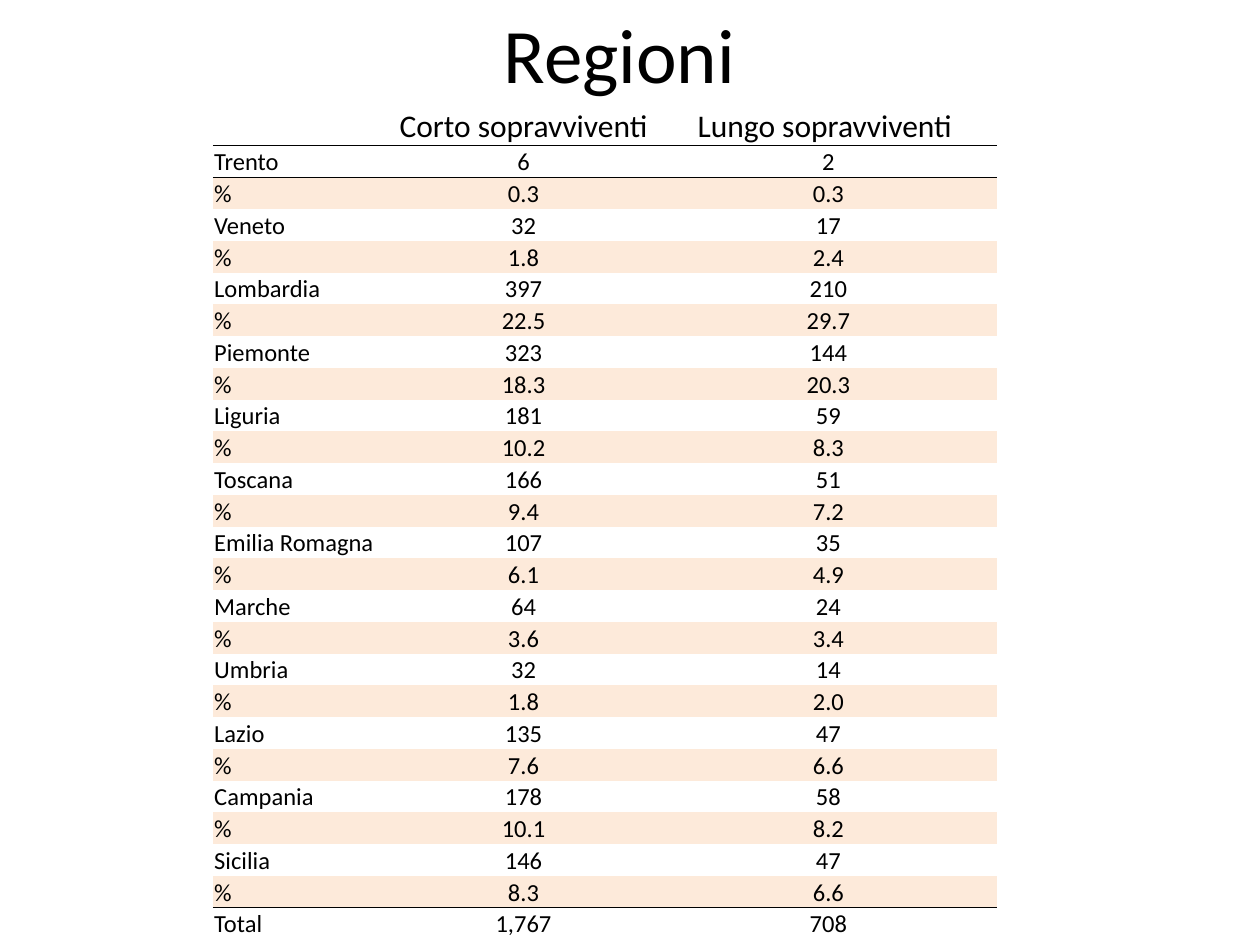
from lxml.etree import SubElement
from pptx import Presentation
from pptx.dml.color import RGBColor
from pptx.enum.text import MSO_ANCHOR, MSO_AUTO_SIZE, PP_ALIGN
from pptx.oxml.ns import qn
from pptx.util import Inches, Pt

TITLE = "Regioni"
HEADINGS = ("", "Corto sopravviventi", "Lungo sopravviventi ")
# region, short survivors, their %, long survivors, their %
REGIONS = [
    ("Trento", "6", "0.3", "2", "0.3"),
    ("Veneto", "32", "1.8", "17", "2.4"),
    ("Lombardia", "397", "22.5", "210", "29.7"),
    ("Piemonte", "323", "18.3", "144", "20.3"),
    ("Liguria", "181", "10.2", "59", "8.3"),
    ("Toscana", "166", "9.4", "51", "7.2"),
    ("Emilia Romagna", "107", "6.1", "35", "4.9"),
    ("Marche", "64", "3.6", "24", "3.4"),
    ("Umbria", "32", "1.8", "14", "2.0"),
    ("Lazio", "135", "7.6", "47", "6.6"),
    ("Campania", "178", "10.1", "58", "8.2"),
    ("Sicilia", "146", "8.3", "47", "6.6"),
]
TOTAL = ("Total", "1,767", "708")

FONT, INK, PAPER, BAND = "Calibri", "000000", "FFFFFF", "FDEADA"
LEFT, TOP, HEIGHT = 1.69, 0.84, 6.61
COLUMNS = (1.38, 2.17, 2.67)
HEADER_HEIGHT = 0.31
NO_STYLE = "{2D5ABB26-0587-4C30-8999-92F81FD0307C}"


def color(value):
    return RGBColor.from_string(value)


def set_font(paragraph, size):
    font = paragraph.font
    font.name, font.size = FONT, Pt(size)
    font.color.rgb = color(INK)


def add_rule(cell, edge):
    """Draw a 1 pt line on a cell edge: "lnT" for top or "lnB" for bottom."""
    line = SubElement(cell._tc.get_or_add_tcPr(), qn(f"a:{edge}"), w=str(Pt(1)))
    fill = SubElement(line, qn("a:solidFill"))
    SubElement(fill, qn("a:srgbClr"), val=INK)


def table_rows():
    rows = [HEADINGS]
    for region, short, short_share, long, long_share in REGIONS:
        rows += [(region, short, long), ("%", short_share, long_share)]
    return rows + [TOTAL]


def add_title(slide):
    title = slide.shapes.add_textbox(Inches(3.9), 0, Inches(2.2), Inches(TOP))
    frame = title.text_frame
    frame.word_wrap = False
    frame.auto_size = MSO_AUTO_SIZE.SHAPE_TO_FIT_TEXT
    frame.text = TITLE
    set_font(frame.paragraphs[0], 44)


def add_region_table(slide):
    rows = table_rows()
    last = len(rows) - 1
    table = slide.shapes.add_table(
        len(rows), len(COLUMNS), Inches(LEFT), Inches(TOP),
        Inches(sum(COLUMNS)), Inches(HEIGHT)).table
    table.first_row = table.horz_banding = False
    table._tbl.tblPr.find(qn("a:tableStyleId")).text = NO_STYLE
    for column, width in zip(table.columns, COLUMNS):
        column.width = Inches(width)

    body_height = (HEIGHT - HEADER_HEIGHT) / last
    for r, values in enumerate(rows):
        is_header = r == 0
        table.rows[r].height = Inches(HEADER_HEIGHT if is_header else body_height)
        for c, value in enumerate(values):
            cell = table.cell(r, c)
            cell.margin_left = cell.margin_right = cell.margin_top = Inches(0.01)
            cell.margin_bottom = 0
            cell.vertical_anchor = MSO_ANCHOR.MIDDLE if is_header else MSO_ANCHOR.BOTTOM
            cell.text = value
            paragraph = cell.text_frame.paragraphs[0]
            paragraph.alignment = PP_ALIGN.CENTER if c else PP_ALIGN.LEFT
            set_font(paragraph, 18 if is_header else 14)
            if r in (1, last):
                add_rule(cell, "lnT")
            if r in (0, last - 1):
                add_rule(cell, "lnB")
            if values[0] == "%":
                cell.fill.solid()
                cell.fill.fore_color.rgb = color(BAND)
            else:
                cell.fill.background()


def main():
    deck = Presentation()
    deck.slide_width, deck.slide_height = Inches(10), Inches(7.5)
    slide = deck.slides.add_slide(deck.slide_layouts[6])
    slide.background.fill.solid()
    slide.background.fill.fore_color.rgb = color(PAPER)
    add_region_table(slide)
    add_title(slide)
    deck.save("out.pptx")


if __name__ == "__main__":
    main()
